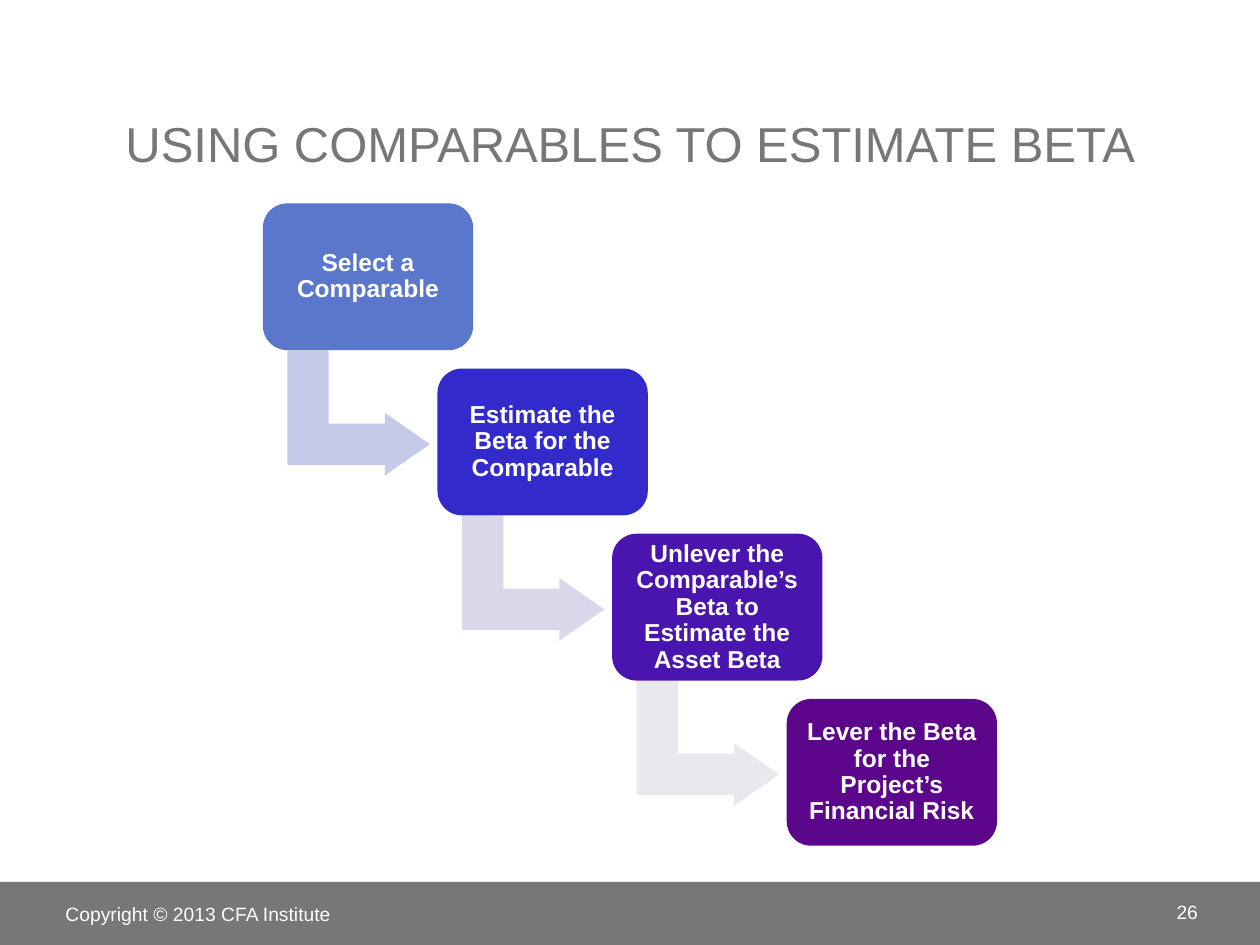
"""Build the slide on using comparables to estimate beta."""
from dataclasses import dataclass

from pptx import Presentation
from pptx.dml.color import RGBColor
from pptx.enum.shapes import MSO_SHAPE
from pptx.enum.text import MSO_ANCHOR, PP_ALIGN
from pptx.util import Cm, Pt

RECT = MSO_SHAPE.RECTANGLE
ROUNDED = MSO_SHAPE.ROUNDED_RECTANGLE
BENT_ARROW = MSO_SHAPE.BENT_UP_ARROW
MIDDLE, BOTTOM = MSO_ANCHOR.MIDDLE, MSO_ANCHOR.BOTTOM
LEFT, CENTER, RIGHT = PP_ALIGN.LEFT, PP_ALIGN.CENTER, PP_ALIGN.RIGHT


@dataclass
class Theme:
    font: str = "Arial"
    gray: str = "777777"
    white: str = "FFFFFF"
    boxes: tuple = ("5B77CC", "322ACB", "4A15AF", "5C068C")
    arrows: tuple = ("C4CAE7", "D9D7E9", "EAE7EE")
    title_size: int = 28
    step_size: int = 14
    footer_size: int = 11


theme = Theme()


def add_block(kind, x, y, w, h, color):
    sp = s.shapes.add_shape(kind, Cm(x), Cm(y), Cm(w), Cm(h))
    sp.shadow.inherit = False
    sp.fill.solid()
    sp.fill.fore_color.rgb = RGBColor.from_string(color)
    sp.line.fill.background()
    return sp


def write(sp, text, size, color, align, anchor=MIDDLE, bold=False):
    tf = sp.text_frame
    tf.word_wrap = True
    tf.vertical_anchor = anchor
    tf.text = text
    p = tf.paragraphs[0]
    p.alignment = align
    r = p.runs[0]
    r.font.name = theme.font
    r.font.size = Pt(size)
    r.font.bold = bold
    r.font.color.rgb = RGBColor.from_string(color)
    return tf


prs = Presentation()
prs.slide_width, prs.slide_height = Cm(25.4), Cm(19.05)
s = prs.slides.add_slide(prs.slide_layouts[5])

add_block(RECT, 0, 17.78, 25.4, 1.27, theme.gray)

title = s.shapes.title
title.left, title.top, title.width, title.height = Cm(1.07), Cm(0.43), Cm(23.27), Cm(3.18)
write(title, "USING COMPARABLES TO ESTIMATE BETA", theme.title_size, theme.gray, CENTER, BOTTOM)

steps = (
    "Select a Comparable",
    "Estimate the Beta for the Comparable",
    "Unlever the Comparable’s Beta to Estimate the Asset Beta",
    "Lever the Beta for the Project’s Financial Risk",
)
x0, y0, dx, dy = 5.3, 4.1, 3.52, 3.33
box_w, box_h = 4.24, 2.96

for i, step in enumerate(steps):
    x, y = x0 + i * dx, y0 + i * dy
    if i < len(theme.arrows):
        sp = add_block(BENT_ARROW, x + 0.67, y + 2.79, 2.52, 2.87, theme.arrows[i])
        sp.rotation = 90
        for n, value in enumerate((0.33, 0.25, 0.36)):
            sp.adjustments[n] = value
    sp = add_block(ROUNDED, x, y, box_w, box_h, theme.boxes[i])
    tf = write(sp, step, theme.step_size, theme.white, CENTER, bold=True)
    tf.margin_left = tf.margin_right = tf.margin_top = tf.margin_bottom = Cm(0.15)
    tf.paragraphs[0].line_spacing = 0.9

footers = (
    ("Copyright © 2013 CFA Institute", 1.07, 17.86, 8.05, 1.12, LEFT),
    ("26", 22.22, 17.88, 2.18, 1.02, RIGHT),
)
for text, x, y, w, h, align in footers:
    sp = s.shapes.add_textbox(Cm(x), Cm(y), Cm(w), Cm(h))
    write(sp, text, theme.footer_size, theme.white, align)

prs.save("out.pptx")
